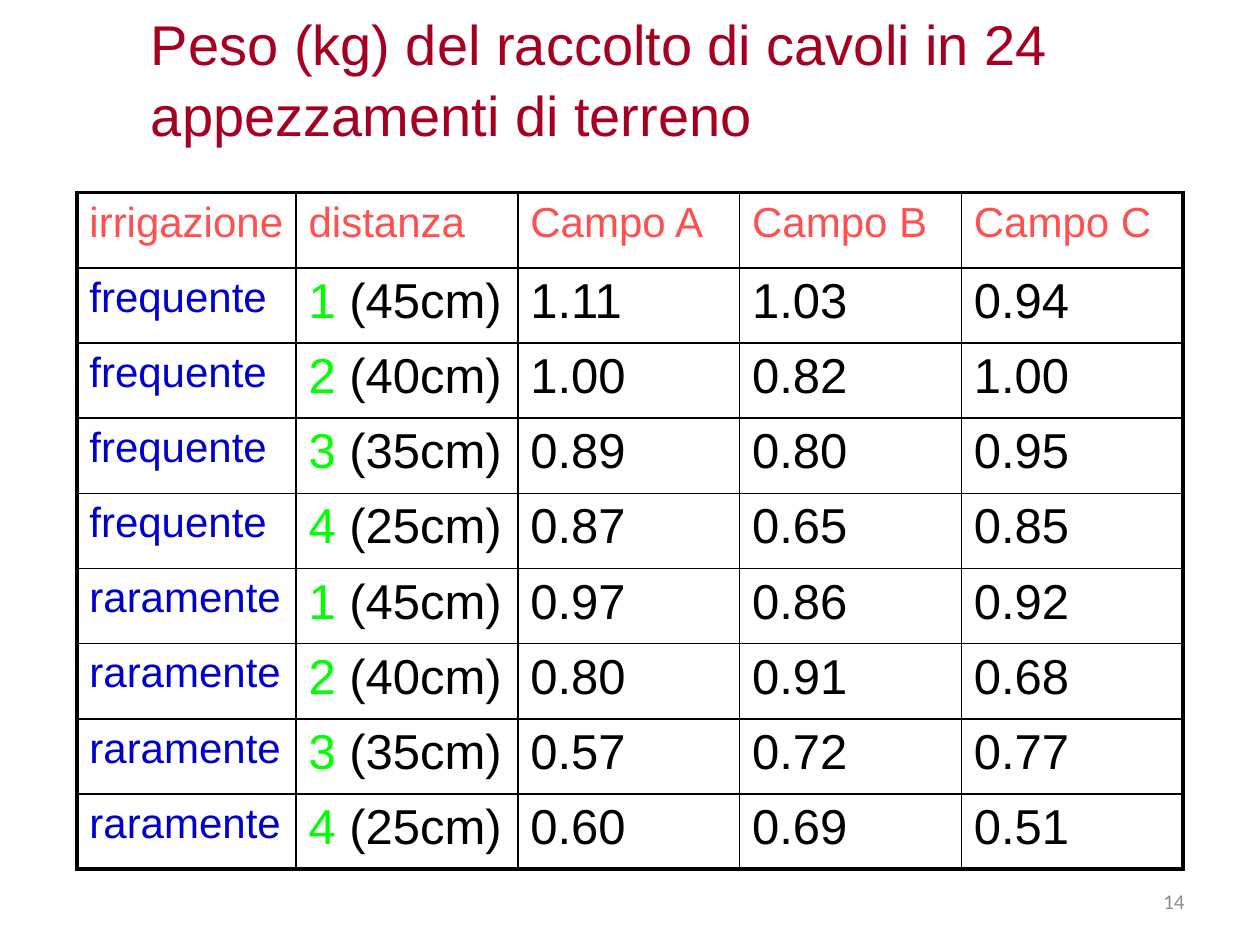
from lxml import etree
from pptx import Presentation, util as u
from pptx.dml.color import RGBColor
from pptx.enum import text
from pptx.oxml import ns

WINE = RGBColor(0xA5, 0x00, 0x21)
CORAL = RGBColor(0xFF, 0x50, 0x50)
BLUE = RGBColor(0x00, 0x00, 0xCC)
GREEN = RGBColor(0x00, 0xFF, 0x00)
BLACK = RGBColor(0x00, 0x00, 0x00)
GRAY = RGBColor(0x8C, 0x8C, 0x8C)

HEADS = ["irrigazione", "distanza", "Campo A", "Campo B", "Campo C"]
GAPS = ["45cm", "40cm", "35cm", "25cm"]
YIELDS = {
    "frequente": ["1.11 1.03 0.94", "1.00 0.82 1.00",
                  "0.89 0.80 0.95", "0.87 0.65 0.85"],
    "raramente": ["0.97 0.86 0.92", "0.80 0.91 0.68",
                  "0.57 0.72 0.77", "0.60 0.69 0.51"],
}


class Page:
    font = "Arial"
    thin, thick = 1, 2.25

    def __init__(self, deck):
        self.slide = deck.slides.add_slide(deck.slide_layouts[6])

    def style(self, run, size, color, font=None):
        run.font.name = font or self.font
        run.font.size = u.Pt(size)
        run.font.color.rgb = color

    def label(self, lines, box, size, color, font=None, align=None,
              anchor=text.MSO_ANCHOR.TOP, pitch=None):
        frame = self.slide.shapes.add_textbox(*map(u.Inches, box)).text_frame
        frame.word_wrap = True
        frame.vertical_anchor = anchor
        frame.text = lines
        for par in frame.paragraphs:
            par.alignment = align
            par.line_spacing = pitch
            self.style(par.runs[0], size, color, font)

    def border(self, cell, widths):
        props = cell._tc.get_or_add_tcPr()
        for side, width in widths.items():
            line = etree.SubElement(props, ns.qn(f"a:ln{side}"), w=str(u.Pt(width)))
            fill = etree.SubElement(line, ns.qn("a:solidFill"))
            etree.SubElement(fill, ns.qn("a:srgbClr"), val=str(BLACK))

    def fill(self, cell, parts):
        par = cell.text_frame.paragraphs[0]
        space = etree.SubElement(par._p.get_or_add_pPr(), ns.qn("a:spcBef"))
        etree.SubElement(space, ns.qn("a:spcPct"), val="20000")
        for words, size, color in parts:
            run = par.add_run()
            run.text = words
            self.style(run, size, color)

    def table(self, rows, left, top, widths, height):
        count, last = len(rows), len(widths) - 1
        grid = self.slide.shapes.add_table(
            count, len(widths), u.Inches(left), u.Inches(top),
            u.Inches(sum(widths)), u.Inches(height)).table
        grid.first_row = grid.horz_banding = False
        for col, width in zip(grid.columns, widths):
            col.width = u.Inches(width)
        for r, row in enumerate(rows):
            grid.rows[r].height = u.Inches(height / count)
            for c, parts in enumerate(row):
                cell = grid.cell(r, c)
                self.fill(cell, parts)
                edges = {"L": c == 0, "R": c == last,
                         "T": r == 0, "B": r == count - 1}
                self.border(cell, {side: self.thick if outer else self.thin
                                   for side, outer in edges.items()})
                cell.fill.background()


def main():
    deck = Presentation()
    deck.slide_width, deck.slide_height = u.Inches(10), u.Inches(7.5)
    page = Page(deck)

    # Page number
    page.label("14", (7.17, 6.95, 2.33, 0.4), 12, GRAY, "Calibri",
               text.PP_ALIGN.RIGHT, text.MSO_ANCHOR.MIDDLE)

    # Harvest table
    rows = [[[(head, 24, CORAL)] for head in HEADS]]
    for water, fields in YIELDS.items():
        for n, (gap, kilos) in enumerate(zip(GAPS, fields), 1):
            rows.append([[(water, 24, BLUE)],
                         [(str(n), 28, GREEN), (f" ({gap})", 28, BLACK)],
                         *([(kilo, 28, BLACK)] for kilo in kilos.split())])
    page.table(rows, 0.61, 1.53, [1.74] + [1.76] * 4, 5.37)

    # Title
    page.label("Peso (kg) del raccolto di cavoli in 24\nappezzamenti di terreno",
               (1.1, 0, 8.9, 1.17), 32, WINE, pitch=1.05)

    deck.save("out.pptx")


if __name__ == "__main__":
    main()
